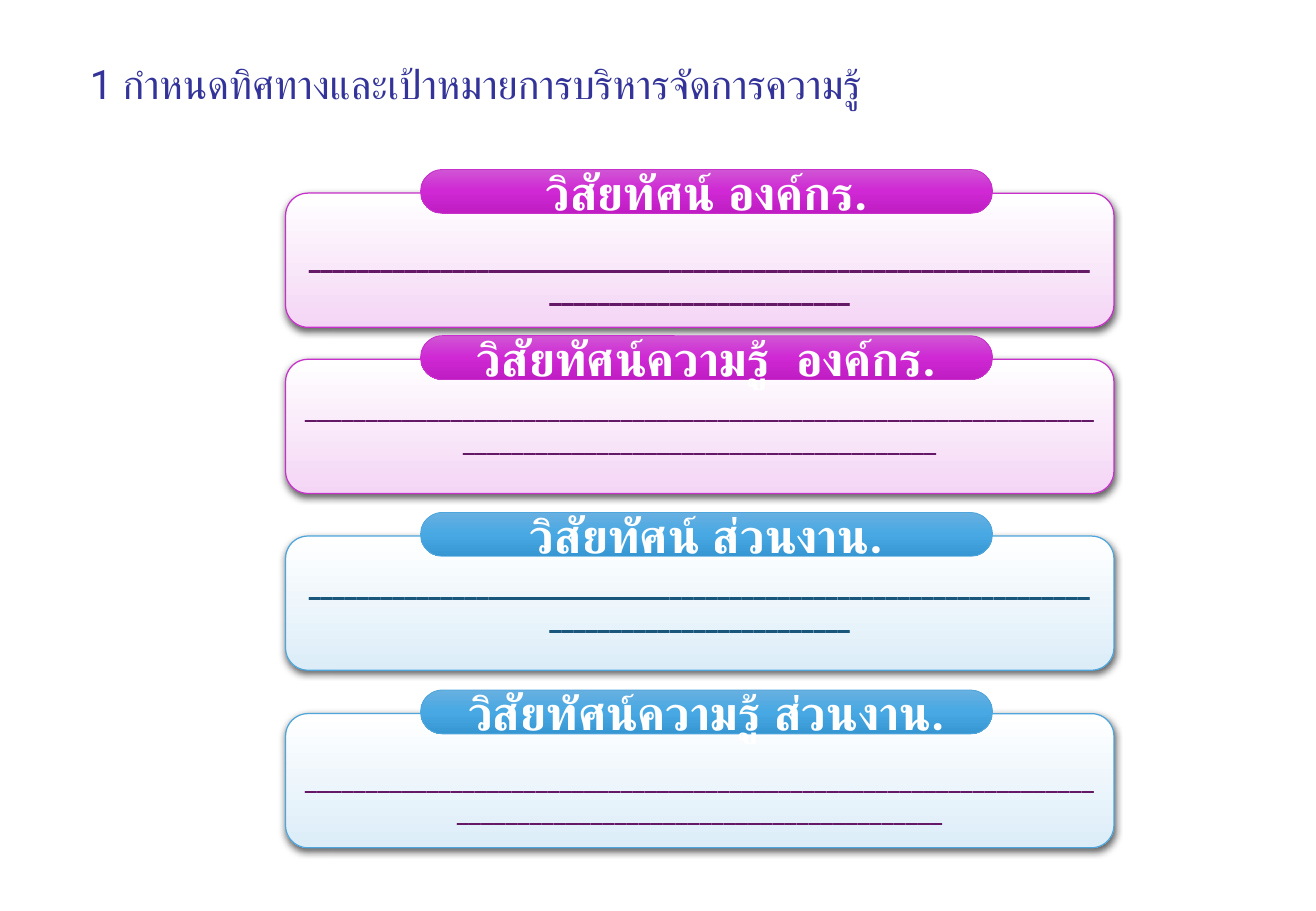
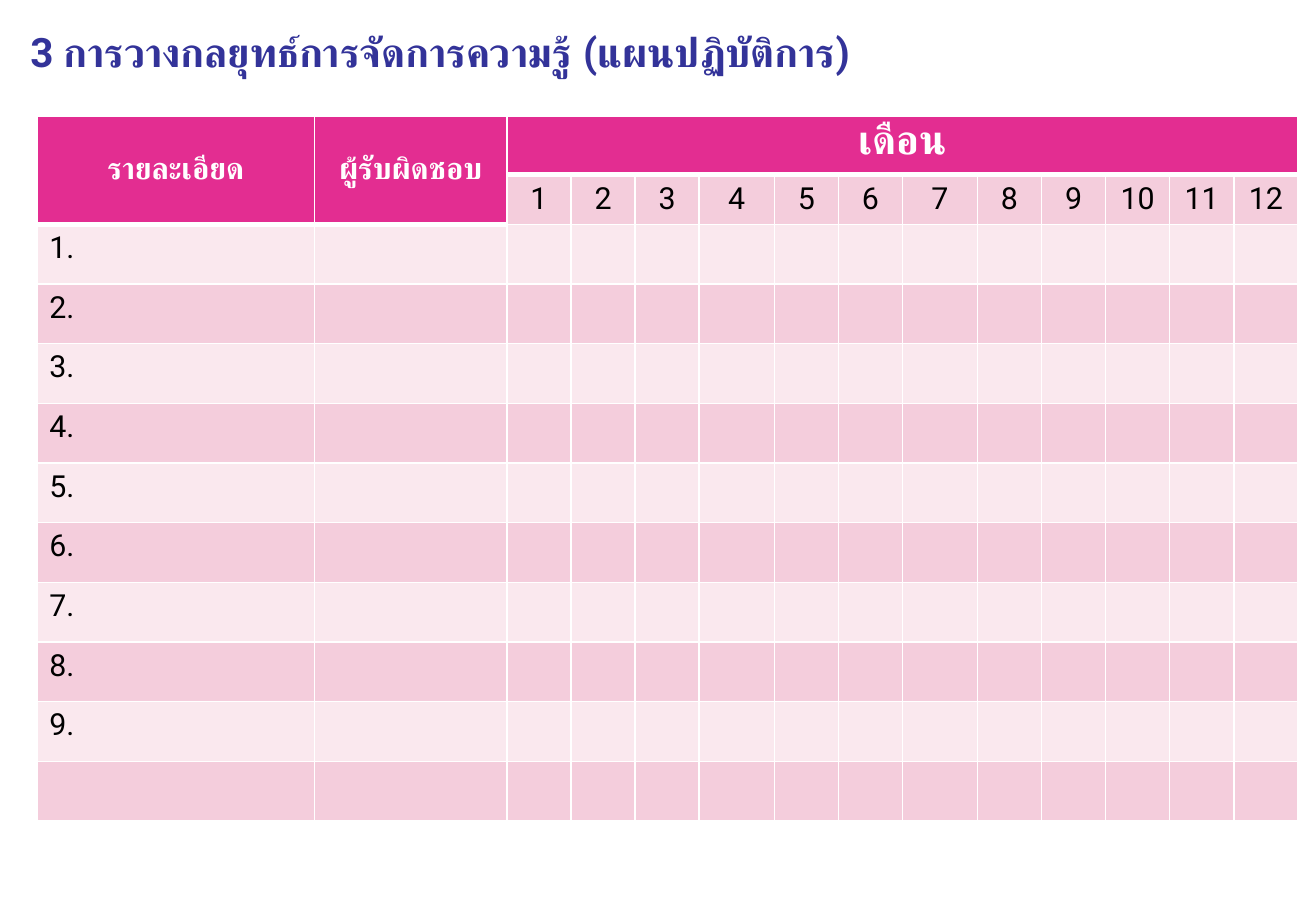
from dataclasses import dataclass

from lxml.etree import SubElement as Sub
from pptx import Presentation
from pptx.dml.color import RGBColor as Rgb
from pptx.enum.shapes import MSO_SHAPE as Shapes
from pptx.enum.text import MSO_ANCHOR as Anchor, MSO_AUTO_SIZE as Fit, PP_ALIGN as Align
from pptx.oxml import parse_xml
from pptx.oxml.ns import nsdecls, qn
from pptx.util import Pt

FONT = "Roboto"
HUES = {
    "title": "333399", "white": "FFFFFF", "black": "000000",
    "plum": "641866", "navy": "19567C",
    "head": "E32D91", "dark": "F4CDDC", "light": "FAE8EE",
}


@dataclass(frozen=True)
class Tone:
    edge: str
    panel: tuple[str, ...]
    pill: tuple[str, ...]


PINK = Tone("C830CC", ("FFFFFF", "F4D5F5"), ("D055D4", "CF28D4", "BF1DC3"))
BLUE = Tone("4EA6DC", ("FFFFFF", "DCEDF8"), ("68B0E1", "47A8E3", "3797D2"))


@dataclass(frozen=True)
class Card:
    top: float
    label: str
    tone: Tone
    count: int
    ink: str
    bold: bool = False
    drop: float = 0


@dataclass(frozen=True)
class Head:
    text: str
    box: tuple[float, ...]
    bold: bool = False
    lead: float = 1.0


CARDS = (
    Card(114.5, "วิสัยทัศน์ องค์กร.", PINK, 90, "plum", True, 18.75),
    Card(213, "วิสัยทัศน์ความรู้  องค์กร.", PINK, 104, "plum"),
    Card(317.75, "วิสัยทัศน์ ส่วนงาน.", BLUE, 90, "navy", True),
    Card(423, "วิสัยทัศน์ความรู้ ส่วนงาน.", BLUE, 105, "plum", drop=18.75),
)
PANEL = {"left": 169.25, "width": 491, "height": 79.5}
PILL = {"left": 249.25, "width": 339, "height": 26}
LIFT = 14

WIDE, MONTH, LONG = (164.5, 114), 38, 44.5
COLS = [*WIDE, *(LONG if m in (4, 7) else MONTH for m in range(1, 13))]
ROWS = [34.5, 29.5] + [35.4] * 10


def put(obj, **vals) -> None:
    """Set each named value on the object."""
    for name, val in vals.items():
        setattr(obj, name, val)


def write(frame, text: str, size: float, ink: str, bold: bool = False,
          align: Align = Align.CENTER, lead: float | None = None) -> None:
    para = frame.paragraphs[0]
    put(para, alignment=align, line_spacing=lead)
    run = para.add_run()
    run.text = text
    put(run.font, name=FONT, size=Pt(size), bold=bold)
    run.font.color.rgb = Rgb.from_string(HUES[ink])


def add_head(slide, head: Head) -> None:
    title = slide.shapes.title
    put(title, **dict(zip(("left", "top", "width", "height"), map(Pt, head.box))))
    put(title.text_frame, vertical_anchor=Anchor.MIDDLE, auto_size=Fit.NONE, word_wrap=True)
    write(title.text_frame, head.text, 24, "title", head.bold, Align.LEFT, head.lead)


def shade(shape, hues: tuple[str, ...]) -> None:
    """Fill from top to bottom with evenly spaced colours."""
    step = 100000 // (len(hues) - 1)
    stops = "".join(f'<a:gs pos="{i * step}"><a:srgbClr val="{hue}"/></a:gs>'
                    for i, hue in enumerate(hues))
    shape._element.spPr.insert(2, parse_xml(
        f'<a:gradFill {nsdecls("a")} rotWithShape="1"><a:gsLst>{stops}</a:gsLst>'
        '<a:lin ang="5400000" scaled="0"/></a:gradFill>'))


def add_round(slide, box: dict, top: float, hues: tuple[str, ...], edge: str, line: float):
    shape = slide.shapes.add_shape(Shapes.ROUNDED_RECTANGLE, Pt(box["left"]), Pt(top),
                                   Pt(box["width"]), Pt(box["height"]))
    shape.shadow.inherit = False
    shade(shape, hues)
    shape.line.width = Pt(line)
    shape.line.color.rgb = Rgb.from_string(edge)
    put(shape.text_frame, vertical_anchor=Anchor.MIDDLE, word_wrap=True)
    return shape


def cast(shape) -> None:
    """Give the shape a soft shadow below."""
    glow = Sub(shape._element.spPr.find(qn("a:effectLst")), qn("a:outerShdw"),
               blurRad=str(Pt(4.5)), dist=str(Pt(1.5)), dir="5400000",
               algn="ctr", rotWithShape="0")
    hue = Sub(glow, qn("a:srgbClr"), val=HUES["black"])
    Sub(hue, qn("a:alpha"), val="63000")


def add_card(slide, card: Card) -> None:
    tone = card.tone
    panel = add_round(slide, PANEL, card.top, tone.panel, tone.edge, 0.75)
    cast(panel)
    panel.text_frame.margin_top = Pt(3.6 + card.drop)
    write(panel.text_frame, "_" * card.count, 16, card.ink, card.bold)
    pill = add_round(slide, PILL, card.top - LIFT, tone.pill, tone.edge, 0.5)
    pill.adjustments[0] = 0.5
    write(pill.text_frame, card.label, 28, "white", True)


def rule(row: int, col: int) -> float:
    """Width of the line above a cell: thick below the header."""
    return 3 if row == 1 or (row == 2 and col < len(WIDE)) else 1


def frame_cell(cell, row: int, col: int) -> None:
    sides = {"L": 1, "R": 1, "T": rule(row, col), "B": rule(row + 1, col)}
    for i, (side, width) in enumerate(sides.items()):
        cell._tc.get_or_add_tcPr().insert(i, parse_xml(
            f'<a:ln{side} {nsdecls("a")} w="{Pt(width)}"><a:solidFill>'
            f'<a:srgbClr val="{HUES["white"]}"/></a:solidFill></a:ln{side}>'))


def add_plan(slide) -> None:
    grid = slide.shapes.add_table(len(ROWS), len(COLS), Pt(22), Pt(69),
                                  Pt(sum(COLS)), Pt(sum(ROWS))).table
    put(grid, first_row=False, horz_banding=False)
    for col, width in zip(grid.columns, COLS):
        col.width = Pt(width)
    for row, height in zip(grid.rows, ROWS):
        row.height = Pt(height)
    for r in range(len(ROWS)):
        for c in range(len(COLS)):
            cell = grid.cell(r, c)
            top = r == 0 or (r == 1 and c < len(WIDE))
            hue = "head" if top else "dark" if r % 2 else "light"
            cell.fill.solid()
            cell.fill.fore_color.rgb = Rgb.from_string(HUES[hue])
            frame_cell(cell, r, c)
    for c, text in enumerate(("รายละเอียด", "ผู้รับผิดชอบ")):
        cell = grid.cell(0, c)
        cell.merge(grid.cell(1, c))
        cell.vertical_anchor = Anchor.MIDDLE
        write(cell.text_frame, text, 18, "white", True)
    first = len(WIDE)
    grid.cell(0, first).merge(grid.cell(0, len(COLS) - 1))
    write(grid.cell(0, first).text_frame, "เดือน", 24, "white", True)
    for month in range(1, 13):
        cell = grid.cell(1, first + month - 1)
        cell.vertical_anchor = Anchor.MIDDLE
        write(cell.text_frame, str(month), 18, "black")
    for item in range(1, 10):
        write(grid.cell(item + 1, 0).text_frame, f"{item}.", 18, "black", align=Align.LEFT)


def main() -> None:
    deck = Presentation()
    put(deck, slide_width=Pt(780), slide_height=Pt(540))
    heads = (
        Head("1 กำหนดทิศทางและเป้าหมายการบริหารจัดการความรู้", (46, 20.5, 703.5, 61), lead=0.9),
        Head("3 การวางกลยุทธ์การจัดการความรู้ (แผนปฏิบัติการ)", (10.75, 0, 644.5, 61), True),
    )
    vision, plan = (deck.slides.add_slide(deck.slide_layouts[5]) for _ in heads)
    for slide, head in zip((vision, plan), heads):
        add_head(slide, head)
    for card in CARDS:
        add_card(vision, card)
    add_plan(plan)
    deck.save("out.pptx")


if __name__ == "__main__":
    main()
